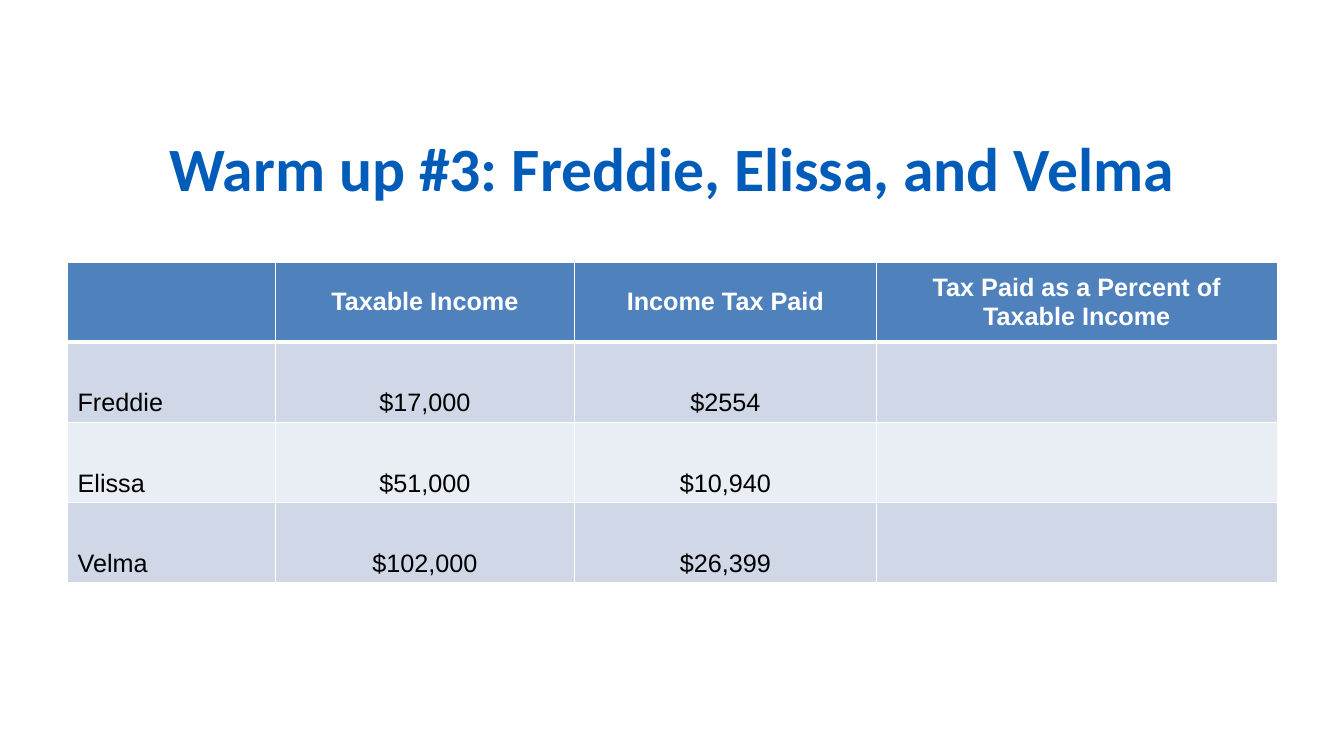
from lxml import etree
from pptx import Presentation
from pptx.dml.color import RGBColor
from pptx.enum.text import MSO_ANCHOR, MSO_AUTO_SIZE, PP_ALIGN
from pptx.oxml.ns import qn
from pptx.util import Pt

PX = 9144
CENTER, LEFT = PP_ALIGN.CENTER, PP_ALIGN.LEFT
MIDDLE, BOTTOM = MSO_ANCHOR.MIDDLE, MSO_ANCHOR.BOTTOM
NO_AUTOFIT = MSO_AUTO_SIZE.NONE
COLORS = {
    "title": "005CB8",
    "header": "4F81BD",
    "odd row": "D0D8E8",
    "even row": "E9EDF4",
    "white": "FFFFFF",
    "black": "000000",
}
TITLE_BOX = (67, 100, 1200, 125)
TABLE_BOX = (67, 260, 1200, 318)
COLUMN_WIDTHS = (206, 297, 299, 398)
TAX_ROWS = (
    ("", "Taxable Income", "Income Tax Paid", "Tax Paid as a Percent of Taxable Income"),
    ("Freddie", "$17,000", "$2554", ""),
    ("Elissa", "$51,000", "$10,940", ""),
    ("Velma", "$102,000", "$26,399", ""),
)


def color(name):
    """Return the named colour."""
    return RGBColor.from_string(COLORS[name])


def style_font(font, family, size, color_name, bold):
    """Set the family, size, colour and weight of a font."""
    font.name = family
    font.size = Pt(size)
    font.bold = bold
    font.color.rgb = color(color_name)


def add_title(page, box, text):
    """Place the centred slide title in the box."""
    title = page.shapes.title
    title.left, title.top, title.width, title.height = (px * PX for px in box)
    frame = title.text_frame
    frame.text = text
    frame.word_wrap = True
    frame.auto_size = NO_AUTOFIT
    frame.vertical_anchor = MIDDLE
    para = frame.paragraphs[0]
    para.alignment = CENTER
    para.line_spacing = Pt(57)
    style_font(para.font, "Calibri", 44, "title", True)


def set_borders(cell, top, bottom):
    """Draw white cell borders with the given top and bottom widths in points."""
    properties = cell._tc.get_or_add_tcPr()
    sides = (("a:lnL", 1), ("a:lnR", 1), ("a:lnT", top), ("a:lnB", bottom))
    for index, (tag, width) in enumerate(sides):
        line = etree.Element(qn(tag), w=str(Pt(width)))
        fill = etree.SubElement(line, qn("a:solidFill"))
        etree.SubElement(fill, qn("a:srgbClr"), val=COLORS["white"])
        properties.insert(index, line)


def fill_cell(cell, text, row, column):
    """Write and style one cell according to its row and column."""
    is_header = row == 0
    fill_name = "header" if is_header else "odd row" if row % 2 else "even row"
    cell.fill.solid()
    cell.fill.fore_color.rgb = color(fill_name)
    cell.text = text
    cell.vertical_anchor = MIDDLE if is_header else BOTTOM
    para = cell.text_frame.paragraphs[0]
    para.alignment = CENTER if is_header or column else LEFT
    style_font(para.font, "Arial", 18, "white" if is_header else "black", is_header)
    set_borders(cell, top=3 if row == 1 else 1, bottom=3 if is_header else 1)


def add_tax_table(page, box, rows):
    """Place the income tax table in the box with equal row heights."""
    left, top, width, height = (px * PX for px in box)
    frame = page.shapes.add_table(len(rows), len(rows[0]), left, top, width, height)
    table = frame.table
    for column, column_width in zip(table.columns, COLUMN_WIDTHS):
        column.width = column_width * PX
    for row, texts in enumerate(rows):
        for column, text in enumerate(texts):
            fill_cell(table.cell(row, column), text, row, column)


def main():
    """Build and save the deck."""
    deck = Presentation()
    deck.slide_width, deck.slide_height = 1333 * PX, 750 * PX
    page = deck.slides.add_slide(deck.slide_layouts[5])
    add_title(page, TITLE_BOX, "Warm up #3: Freddie, Elissa, and Velma")
    add_tax_table(page, TABLE_BOX, TAX_ROWS)
    deck.save("out.pptx")


if __name__ == "__main__":
    main()
